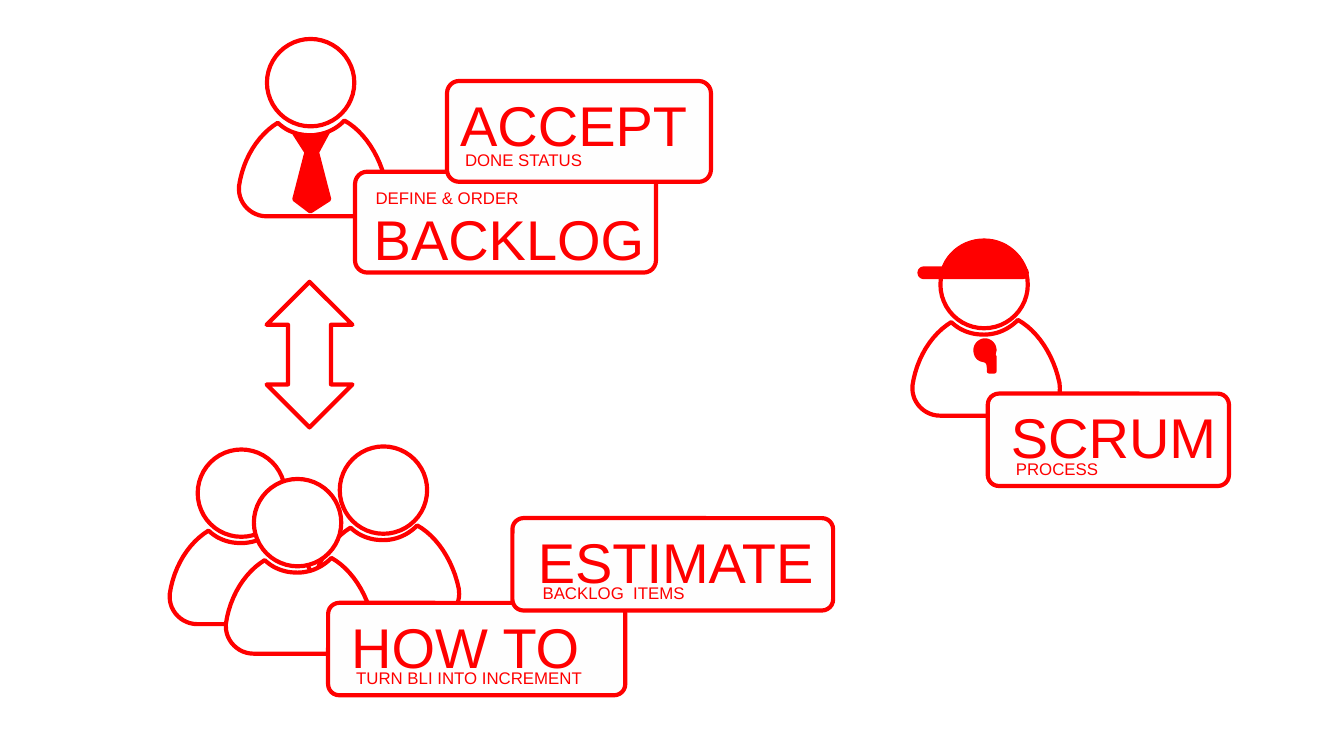
from dataclasses import dataclass

from pptx import Presentation
from pptx.dml.color import RGBColor
from pptx.enum.shapes import MSO_SHAPE as Kind
from pptx.enum.text import MSO_AUTO_SIZE as Fit
from pptx.util import Pt


@dataclass(frozen=True)
class Theme:
    red: str = "FF0000"
    white: str = "FFFFFF"
    card: str = "FEFEFE"
    font: str = "Arial"
    big: float = 30
    small: float = 9
    line: float = 2.25


# Outlines in points: a pair is a corner, six numbers are a Bezier curve.
BODY = [
    (78.8, 33.8),
    (75.6, 18.7, 67, 5.8, 56.5, 0),
    (52, 4.8, 45.5, 7.9, 38.3, 7.9),
    (31.2, 7.9, 25.3, 5.5, 20.8, 1.2),
    (10.2, 7.7, 2.2, 20.3, 0, 35.3),
    (0, 36.7),
    (0, 44.6, 6.6, 51.3, 14.8, 51.3),
    (64, 51.3),
    (72.3, 51.3, 79, 44.6, 79, 36.7),
]
TIE = [(0, 0.7), (5.8, 2.2, 12.2, 2.2, 18, 0), (12.2, 10.8),
       (18.7, 36), (8.6, 42.5), (0, 36), (6.5, 10.8)]
CAP = [(22, 0), (32, 0, 40.5, 6.3, 44, 15.3), (0, 15.3),
       (3, 6.3, 11.7, 0, 22, 0)]
WHISTLE = [(10.2, 5.2), (10.2, 2.5, 8, 0, 5.1, 0),
           (2.3, 0, 0, 2.5, 0, 5.2), (0, 8, 1.6, 10, 3.8, 10.4),
           (6.5, 10.8, 7.2, 12.2, 7.2, 15.1), (7.2, 16.6),
           (10.2, 16.6), (10.2, 8.6), (9.6, 7.9)]


def trace(path, steps=12):
    """Turn corners and curves into a list of points."""
    pts = []
    for seg in path:
        if len(seg) == 2:
            pts.append(seg)
            continue
        ends = (pts[-1], seg[:2], seg[2:4], seg[4:])
        for i in range(1, steps + 1):
            t = i / steps
            u = 1 - t
            mix = (u**3, 3 * u * u * t, 3 * u * t * t, t**3)
            pts.append(tuple(sum(m * p[k] for m, p in zip(mix, ends))
                             for k in (0, 1)))
    return pts


class Board:
    def __init__(self, slide, theme):
        self.shapes = slide.shapes
        self.theme = theme

    def dress(self, shape, fill):
        shape.shadow.inherit = False
        if fill:
            shape.fill.solid()
            shape.fill.fore_color.rgb = RGBColor.from_string(fill)
        else:
            shape.fill.background()
        shape.line.color.rgb = RGBColor.from_string(self.theme.red)
        shape.line.width = Pt(self.theme.line)

    def shape(self, kind, x, y, w, h, fill=None, curve=None):
        item = self.shapes.add_shape(kind, Pt(x), Pt(y), Pt(w), Pt(h))
        if curve is not None:
            item.adjustments[0] = curve
        self.dress(item, fill)

    def free(self, path, x, y, fill=None):
        first, *rest = [(Pt(x + a), Pt(y + b)) for a, b in trace(path)]
        pen = self.shapes.build_freeform(*first)
        pen.add_line_segments(rest, close=True)
        self.dress(pen.convert_to_shape(), fill)

    def text(self, words, *, x, y, w, h, size):
        box = self.shapes.add_textbox(Pt(x), Pt(y), Pt(w), Pt(h))
        frame = box.text_frame
        frame.margin_left = frame.margin_right = 0
        frame.margin_top = frame.margin_bottom = 0
        frame.word_wrap = False
        frame.auto_size = Fit.SHAPE_TO_FIT_TEXT
        run = frame.paragraphs[0].add_run()
        run.text = words
        run.font.name = self.theme.font
        run.font.size = Pt(size)
        run.font.color.rgb = RGBColor.from_string(self.theme.red)

    def head(self, x, y, fill=None, rise=42.3):
        self.shape(Kind.OVAL, x + 15, y - rise, 46.8, 46.8, fill)

    def person(self, x, y, fill=None):
        self.free(BODY, x, y, fill)
        self.head(x, y, fill)

    def card(self, x, y, w, h, title, note):
        """Each label is its words, x and y within the card, and width."""
        look = self.theme
        self.shape(Kind.ROUNDED_RECTANGLE, x, y, w, h, look.card, 0.12)
        for label, size, tall in ((title, look.big, 36),
                                  (note, look.small, 10.8)):
            words, dx, dy, wide = label
            self.text(words, x=x + dx, y=y + dy, w=wide, h=tall, size=size)


def main():
    deck = Presentation()
    deck.slide_width, deck.slide_height = Pt(720), Pt(405)
    look = Theme()
    board = Board(deck.slides.add_slide(deck.slide_layouts[6]), look)

    # Team
    board.person(167, 281.5)
    board.person(90.9, 283.1, look.white)
    board.person(121, 298.9, look.white)

    # Product owner
    board.free(BODY, 128, 64.6)
    board.free(TIE, 157.7, 70.8, look.red)
    board.head(128, 64.6, rise=43.7)

    # Scrum master
    board.person(488.8, 171.4)
    board.free(CAP, 505.3, 128.9, look.red)
    board.shape(Kind.ROUNDED_RECTANGLE, 492.6, 143.8, 57.5, 4.7,
                look.red, 0.5)
    board.free(WHISTLE, 522.6, 182.4, look.red)

    board.shape(Kind.UP_DOWN_ARROW, 142.8, 151, 46, 78, look.white)

    cards = [
        (190.2, 92, 161.2, 54, ("BACKLOG", 10, 17.5, 146),
         ("DEFINE & ORDER", 11, 8.8, 77)),
        (239.5, 43.4, 141.4, 54, ("ACCEPT", 7, 5, 123),
         ("DONE STATUS", 9.6, 36.6, 65)),
        (175.8, 323, 159.2, 49.5, ("HOW TO", 12.4, 5, 124),
         ("TURN BLI INTO INCREMENT", 15, 34.8, 122.4)),
        (274.5, 277.6, 171.8, 49.5, ("ESTIMATE", 13.7, 5, 149),
         ("BACKLOG  ITEMS", 16.2, 34.8, 77)),
        (529.2, 210.9, 129.2, 49.5, ("SCRUM", 12.4, 5, 111),
         ("PROCESS", 15, 34.8, 44.6)),
    ]
    for card in cards:
        board.card(*card)

    deck.save("out.pptx")


if __name__ == "__main__":
    main()
